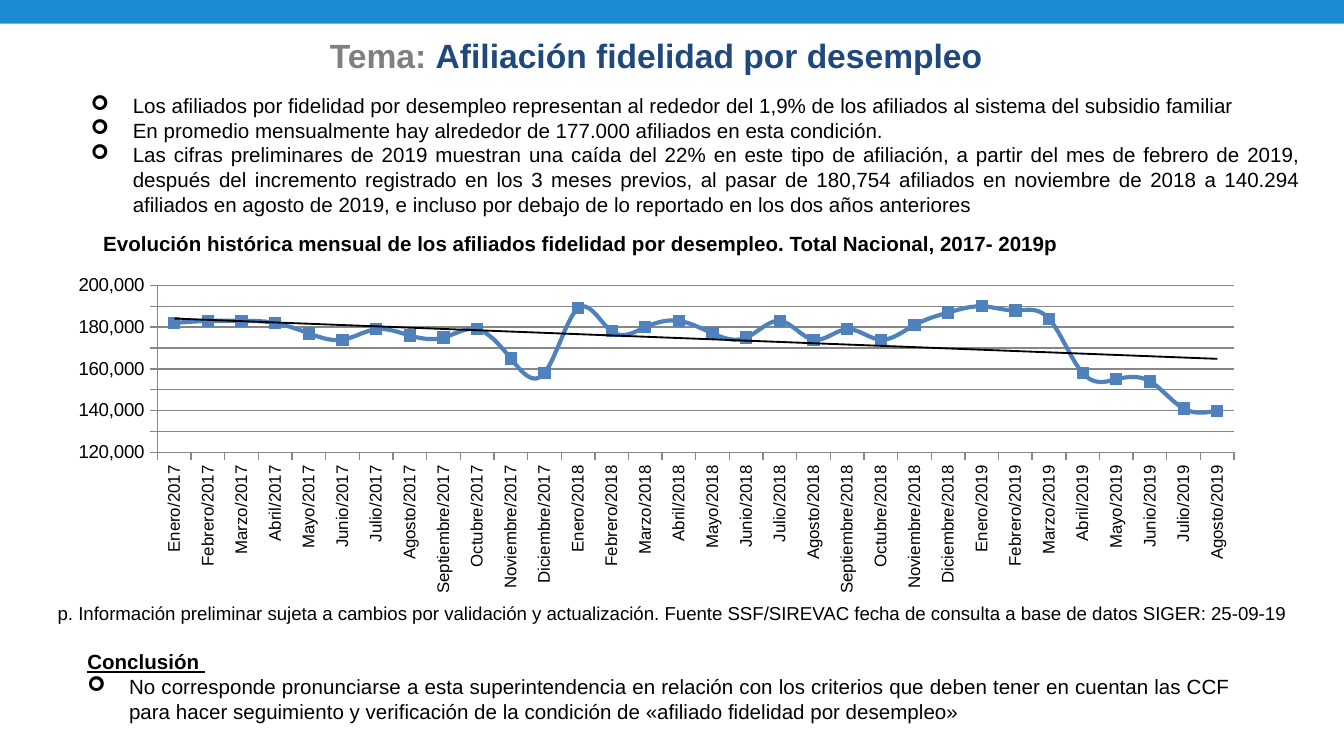
from lxml import etree
from pptx import Presentation
from pptx.chart.data import CategoryChartData
from pptx.dml.color import RGBColor
from pptx.enum.chart import XL_CHART_TYPE, XL_MARKER_STYLE, XL_TICK_MARK
from pptx.enum.shapes import MSO_SHAPE
from pptx.enum.text import MSO_ANCHOR, PP_ALIGN
from pptx.oxml import parse_xml
from pptx.oxml.ns import nsdecls, qn
from pptx.util import Cm, Pt

LEFT, CENTER, JUSTIFY = PP_ALIGN.LEFT, PP_ALIGN.CENTER, PP_ALIGN.JUSTIFY
LINE_MARKERS = XL_CHART_TYPE.LINE_MARKERS
SQUARE = XL_MARKER_STYLE.SQUARE
TICK_OUT = XL_TICK_MARK.OUTSIDE
FONT = "Arial"
COLORS = {
    "band": "1B8BD4", "gray": "808080", "navy": "1F497D",
    "text": "000000", "line": "4F81BD", "grid": "878787",
}


def rgb(name):
    return RGBColor.from_string(COLORS[name])


def add_text(box, paragraphs):
    """Each paragraph: (alignment, bulleted, [(text, size, color, bold, underline)])."""
    tf = s.shapes.add_textbox(*(Cm(v) for v in box)).text_frame
    tf.word_wrap = True
    tf.vertical_anchor = MSO_ANCHOR.TOP
    for i, (align, bulleted, runs) in enumerate(paragraphs):
        p = tf.paragraphs[0] if i == 0 else tf.add_paragraph()
        p.alignment = align
        if bulleted:
            pPr = p._p.get_or_add_pPr()
            pPr.set("marL", str(Cm(0.79)))
            pPr.set("indent", str(-Cm(0.79)))
            etree.SubElement(pPr, qn("a:buFont")).set("typeface", "Wingdings")
            etree.SubElement(pPr, qn("a:buChar")).set("char", "➢")
        for text, size, color, bold, underline in runs:
            r = p.add_run()
            r.text = text
            r.font.name, r.font.size = FONT, Pt(size)
            r.font.bold, r.font.underline = bold, underline
            r.font.color.rgb = rgb(color)


prs = Presentation()
prs.slide_width, prs.slide_height = Cm(25.4), Cm(14.28)
s = prs.slides.add_slide(prs.slide_layouts[6])

# Top band
band = s.shapes.add_shape(MSO_SHAPE.RECTANGLE, 0, Cm(-0.03), prs.slide_width, Cm(0.48))
band.shadow.inherit = False
band.fill.solid()
band.fill.fore_color.rgb = rgb("band")
band.line.fill.background()

# Title
add_text((4.9, 0.53, 15.01, 1.02), [(CENTER, False, [
    ("Tema: ", 18, "gray", True, False),
    ("Afiliación fidelidad por desempleo", 18, "navy", True, False),
])])

# Key points
points = [
    "Los afiliados por fidelidad por desempleo representan al rededor del 1,9% de los "
    "afiliados al sistema del subsidio familiar",
    "En promedio mensualmente hay alrededor de 177.000 afiliados en esta condición.",
    "Las cifras preliminares de 2019 muestran una caída del 22% en este tipo de afiliación, "
    "a partir del mes de febrero de 2019, después del incremento registrado en los 3 meses "
    "previos, al pasar de 180,754 afiliados en noviembre de 2018 a 140.294 afiliados en "
    "agosto de 2019, e incluso por debajo de lo reportado en los dos años anteriores",
]
add_text((1.47, 1.63, 23.37, 2.62),
         [(JUSTIFY, True, [(point, 11, "text", False, False)]) for point in points])

# Chart heading
add_text((1.7, 4.24, 19.61, 0.74), [(LEFT, False, [
    ("Evolución histórica mensual de los afiliados fidelidad por desempleo. "
     "Total Nacional, 2017- 2019p", 11, "text", True, False),
])])

# Monthly chart, January 2017 to August 2019
months = ["Enero", "Febrero", "Marzo", "Abril", "Mayo", "Junio", "Julio", "Agosto",
          "Septiembre", "Octubre", "Noviembre", "Diciembre"]
thousands = [
    182, 183, 183, 182, 177, 174, 179, 176, 175, 179, 165, 158,
    189, 178, 180, 183, 177, 175, 183, 174, 179, 174, 181, 187,
    190, 188, 184, 158, 155, 154, 141, 140,
]
data = CategoryChartData()
data.categories = [f"{months[i % 12]}/{2017 + i // 12}" for i in range(len(thousands))]
data.add_series("Afiliados", [v * 1000 for v in thousands])
chart = s.shapes.add_chart(LINE_MARKERS, Cm(1.02), Cm(5.08), Cm(22.76), Cm(6.27), data).chart
chart.has_legend = False
chart.has_title = False
chart.font.name, chart.font.size = FONT, Pt(10)
chart.font.color.rgb = rgb("text")

plot = chart.plots[0]
plot.vary_by_categories = False
series = plot.series[0]
series.smooth = True
series.format.line.color.rgb = rgb("line")
series.format.line.width = Pt(2.25)
series.marker.style, series.marker.size = SQUARE, 6
series.marker.format.fill.solid()
series.marker.format.fill.fore_color.rgb = rgb("line")
series.marker.format.line.color.rgb = rgb("line")

# Axes
cat_axis, val_axis = chart.category_axis, chart.value_axis
for axis in (cat_axis, val_axis):
    axis.major_tick_mark = TICK_OUT
    axis.format.line.color.rgb = rgb("grid")
    axis.format.line.width = Pt(0.75)
cat_axis.tick_labels.font.size = Pt(9)
cat_axis.tick_labels.font.name = FONT
cat_axis.tick_labels.font.color.rgb = rgb("text")
cat_axis._element.find(qn("c:txPr")).find(qn("a:bodyPr")).set("rot", "-5400000")
val_axis.minimum_scale, val_axis.maximum_scale = 120000, 200000
val_axis.major_unit = 10000
val_axis.tick_labels.number_format = r"#,##0;\(#,##0\)"
val_axis.tick_labels.number_format_is_linked = False
val_axis.has_major_gridlines = True
val_axis.major_gridlines.format.line.color.rgb = rgb("grid")
val_axis.major_gridlines.format.line.width = Pt(0.75)

# Linear trend line
series._element.find(qn("c:cat")).addprevious(parse_xml(
    f'<c:trendline {nsdecls("c", "a")}><c:spPr><a:ln w="{Pt(1)}"><a:solidFill>'
    f'<a:srgbClr val="{COLORS["text"]}"/></a:solidFill></a:ln></c:spPr>'
    '<c:trendlineType val="linear"/><c:dispRSqr val="0"/><c:dispEq val="0"/></c:trendline>'))

# Plot area position
plot_area = chart._chartSpace.chart.plotArea
for old in plot_area.findall(qn("c:layout")):
    plot_area.remove(old)
place = "".join(f'<c:{tag} val="{val}"/>' for tag, val in (
    ("layoutTarget", "inner"), ("xMode", "edge"), ("yMode", "edge"),
    ("x", 0.086), ("y", 0.05), ("w", 0.894), ("h", 0.503)))
plot_area.insert(0, parse_xml(
    f'<c:layout {nsdecls("c")}><c:manualLayout>{place}</c:manualLayout></c:layout>'))

# Source note
add_text((0.84, 11.25, 24.61, 0.69), [(LEFT, False, [
    ("p. Información preliminar sujeta a cambios por validación y actualización. Fuente "
     "SSF/SIREVAC fecha de consulta a base de datos SIGER: 25-09-19", 10, "text", False, False),
])])

# Conclusion
add_text((1.4, 12.14, 22.12, 1.68), [
    (JUSTIFY, False, [("Conclusión ", 11, "text", True, True)]),
    (JUSTIFY, True, [
        ("No corresponde pronunciarse a esta superintendencia en relación con los criterios "
         "que deben tener en cuentan las CCF para hacer seguimiento y verificación de la "
         "condición de «afiliado fidelidad por desempleo»", 11, "text", False, False),
    ]),
])

prs.save("out.pptx")
